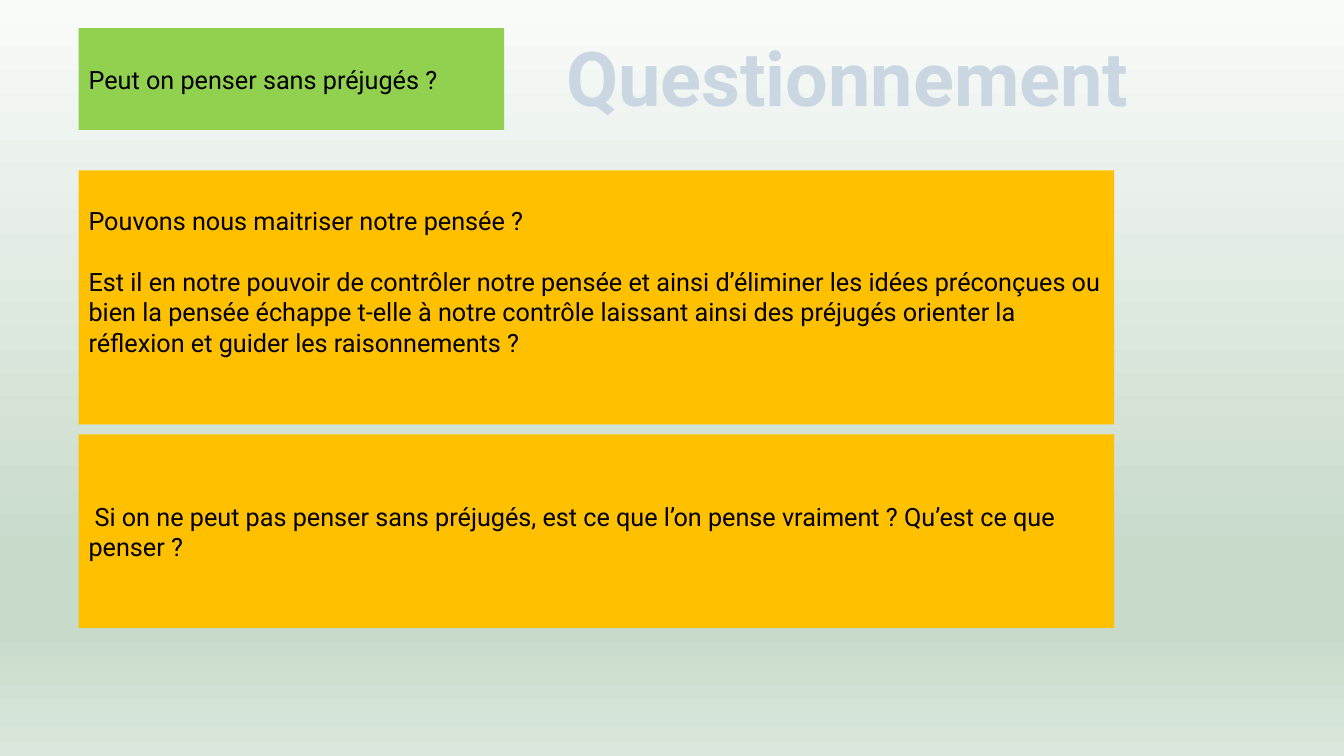
from copy import deepcopy

from pptx import Presentation
from pptx.dml.color import RGBColor
from pptx.enum.shapes import MSO_SHAPE as Shape
from pptx.enum.text import MSO_ANCHOR as Anchor, MSO_AUTO_SIZE as AutoSize, PP_ALIGN as Align
from pptx.oxml.ns import qn
from pptx.util import Inches, Pt

FONT = "Roboto"
LEFT, WIDE = 0.78, 10.27
GREEN, AMBER = "92D050", "FFC000"
BACKDROP = [(0, "F9FBF9"), (0.74, "C8DBCB"), (0.83, "C8DBCB"), (1, "DAE7DC")]
QUESTIONS = [
    ((LEFT, 0.28, 4.22, 1.01), GREEN, ["Peut on penser sans préjugés ?"],
     {"vertical_anchor": Anchor.MIDDLE}, 0),
    ((LEFT, 1.69, WIDE, 2.52), AMBER,
     ["Pouvons nous maitriser notre pensée ?",
      "Est il en notre pouvoir de contrôler notre pensée et ainsi d’éliminer les idées "
      "préconçues ou bien la pensée échappe t-elle à notre contrôle laissant ainsi des "
      "préjugés orienter la réflexion et guider les raisonnements ?"],
     {"vertical_anchor": Anchor.TOP, "margin_top": Inches(0.35)}, 0),
    ((LEFT, 4.31, WIDE, 1.92), AMBER,
     ["Si on ne peut pas penser sans préjugés, est ce que l’on pense vraiment ? "
      "Qu’est ce que penser ?"],
     {"vertical_anchor": Anchor.MIDDLE}, 0.06),
]


def rgb(value):
    """Turn a hex string into a colour."""
    return RGBColor.from_string(value)


def apply(target, formats):
    """Set each attribute named in a dict of format values."""
    for name, value in formats.items():
        setattr(target, name, value)


def format_font(p, size, color, bold=False):
    """Give a paragraph its font."""
    apply(p.font, {"name": FONT, "size": Pt(size), "bold": bold})
    p.font.color.rgb = rgb(color)


def paint_background(s):
    """Fill the slide with a vertical gradient."""
    fill = s.background.fill
    fill.gradient()
    fill.gradient_angle = 270
    stops = next(s.element.iter(qn("a:gsLst")))
    for _ in range(len(BACKDROP) - len(stops)):
        stops.append(deepcopy(stops[0]))
    for stop, (position, color) in zip(fill.gradient_stops, BACKDROP):
        stop.position = position
        stop.color.rgb = rgb(color)


def place_title(s, box, text):
    """Place the large heading in its box."""
    title = s.shapes.title
    apply(title, dict(zip(("left", "top", "width", "height"), map(Inches, box))))
    tf = title.text_frame
    apply(tf, {"text": text, "word_wrap": False, "auto_size": AutoSize.NONE,
               "vertical_anchor": Anchor.MIDDLE})
    p = tf.paragraphs[0]
    p.alignment = Align.CENTER
    format_font(p, 54, "CAD7E2", True)


def add_question(s, box, color, texts, frame, indent):
    """Add a coloured panel holding paragraphs of questions."""
    sp = s.shapes.add_shape(Shape.RECTANGLE, *map(Inches, box))
    sp.shadow.inherit = False
    sp.fill.solid()
    sp.fill.fore_color.rgb = rgb(color)
    sp.line.fill.background()
    tf = sp.text_frame
    apply(tf, {"word_wrap": True, **frame})
    for i, text in enumerate(texts):
        p = tf.add_paragraph() if i else tf.paragraphs[0]
        apply(p, {"text": text, "alignment": Align.LEFT})
        if i:
            p.space_before = Pt(21.75)
        if indent:
            p._p.get_or_add_pPr().set("indent", str(Inches(indent)))
        format_font(p, 18, "000000")


def main():
    """Build and save the slide."""
    prs = Presentation()
    apply(prs, {"slide_width": Inches(13.33), "slide_height": Inches(7.5)})
    s = prs.slides.add_slide(prs.slide_layouts[5])
    paint_background(s)
    place_title(s, (5.21, 0.25, 6.39, 1.01), "Questionnement")
    for question in QUESTIONS:
        add_question(s, *question)
    prs.save("out.pptx")


if __name__ == "__main__":
    main()
